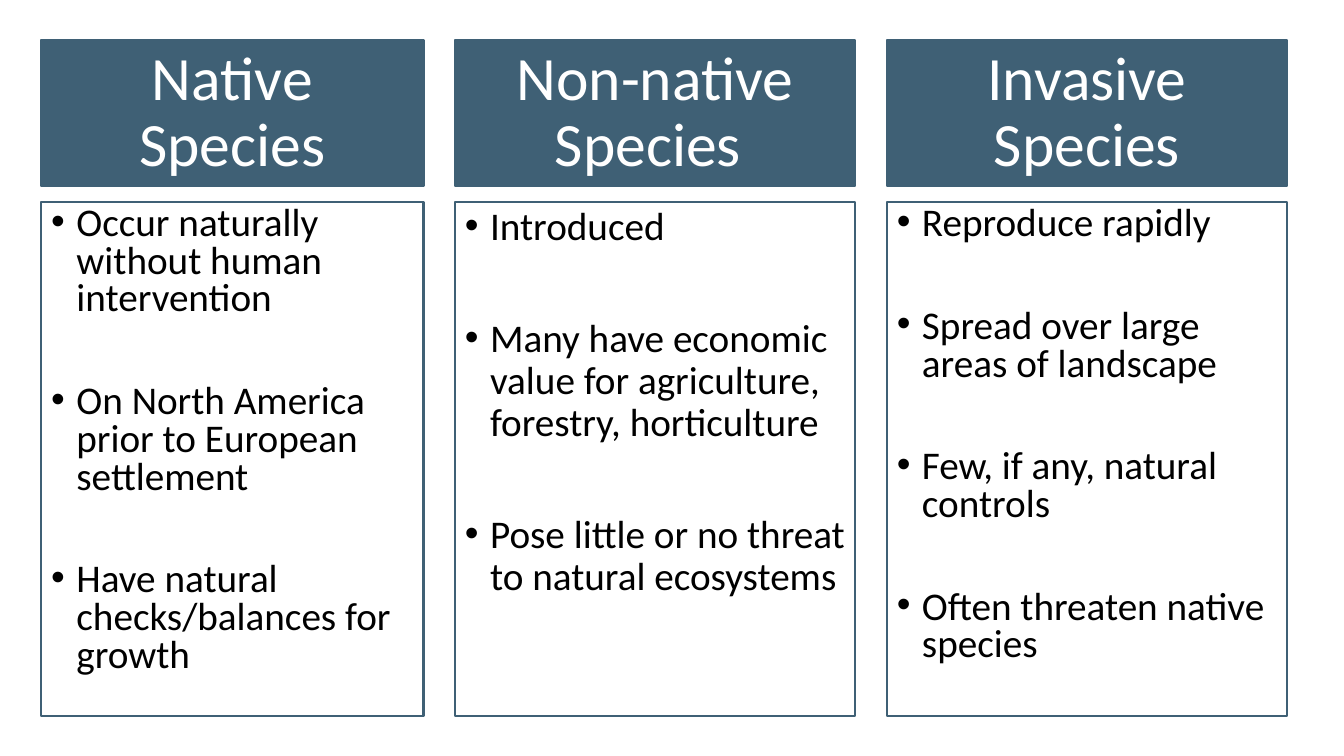
from pptx import Presentation
from pptx.dml.color import RGBColor
from pptx.enum import shapes, text
from pptx.oxml.ns import qn
from pptx.util import Pt
from lxml import etree

SLATE = RGBColor(0x3F, 0x60, 0x75)
WHITE = RGBColor(0xFF, 0xFF, 0xFF)
BLACK = RGBColor(0, 0, 0)

LEFT, GAP = 29.5, 22.5
HEADER_TOP, HEADER_HEIGHT = 28.8, 104.4
BODY_TOP, BODY_HEIGHT = 144, 367.2
INDENT = Pt(18)

# Column: heading, width, line spacing, space between bullets, bullets
COLUMNS = [
    ("Native\vSpecies", 273, 0.8, 46.5, [
        "Occur naturally without human intervention",
        "On North America prior to European settlement",
        "Have natural checks/balances for growth"]),
    ("Non-native\vSpecies ", 286, 0.9, 49.5, [
        "Introduced",
        "Many have economic value for agriculture, forestry, horticulture",
        "Pose little or no threat to natural ecosystems"]),
    ("Invasive Species", 286, 0.8, 46.5, [
        "Reproduce rapidly",
        "Spread over large areas of landscape",
        "Few, if any, natural controls",
        "Often threaten native species"]),
]


def style_box(shape, box, fill, anchor):
    for name, value in zip(("left", "top", "width", "height"), box):
        setattr(shape, name, Pt(value))
    shape.shadow.inherit = False
    shape.fill.solid()
    shape.fill.fore_color.rgb = fill
    shape.line.color.rgb = SLATE
    shape.line.width = Pt(1.5)
    frame_format = {"word_wrap": True, "auto_size": text.MSO_AUTO_SIZE.NONE,
                    "vertical_anchor": anchor}
    for name, value in frame_format.items():
        setattr(shape.text_frame, name, value)


def style_paragraph(paragraph, size, color, paragraph_format):
    for name, value in paragraph_format.items():
        setattr(paragraph, name, value)
    for run in paragraph.runs:
        run.font.name = "Calibri"
        run.font.size = Pt(size)
        run.font.color.rgb = color


presentation = Presentation()
presentation.slide_width, presentation.slide_height = Pt(960), Pt(540)
slide = presentation.slides.add_slide(presentation.slide_layouts[5])
slide.background.fill.solid()
slide.background.fill.fore_color.rgb = WHITE

left = LEFT
for index, (heading, width, spacing, space, bullets) in enumerate(COLUMNS):
    # Heading: the first column holds the slide title
    if index == 0:
        header = slide.shapes.title
    else:
        header = slide.shapes.add_shape(shapes.MSO_SHAPE.RECTANGLE, 0, 0, 0, 0)
    style_box(header, (left, HEADER_TOP, width, HEADER_HEIGHT), SLATE,
              text.MSO_ANCHOR.MIDDLE)
    header.text_frame.text = heading
    style_paragraph(header.text_frame.paragraphs[0], 44, WHITE,
                    {"alignment": text.PP_ALIGN.CENTER, "line_spacing": 0.9})

    # Bulleted box
    body = slide.shapes.add_shape(shapes.MSO_SHAPE.RECTANGLE, 0, 0, 0, 0)
    style_box(body, (left, BODY_TOP, width, BODY_HEIGHT), WHITE,
              text.MSO_ANCHOR.TOP)
    body.text_frame.text = "\n".join(bullets)
    for number, paragraph in enumerate(body.text_frame.paragraphs):
        style_paragraph(paragraph, 28, BLACK, {
            "alignment": text.PP_ALIGN.LEFT, "line_spacing": spacing,
            "space_before": Pt(space if number else 0)})
        properties = paragraph._p.get_or_add_pPr()
        properties.set("marL", str(INDENT))
        properties.set("indent", str(-INDENT))
        etree.SubElement(properties, qn("a:buFont")).set("typeface", "Arial")
        etree.SubElement(properties, qn("a:buChar")).set("char", "•")

    left += width + GAP

presentation.save("out.pptx")
